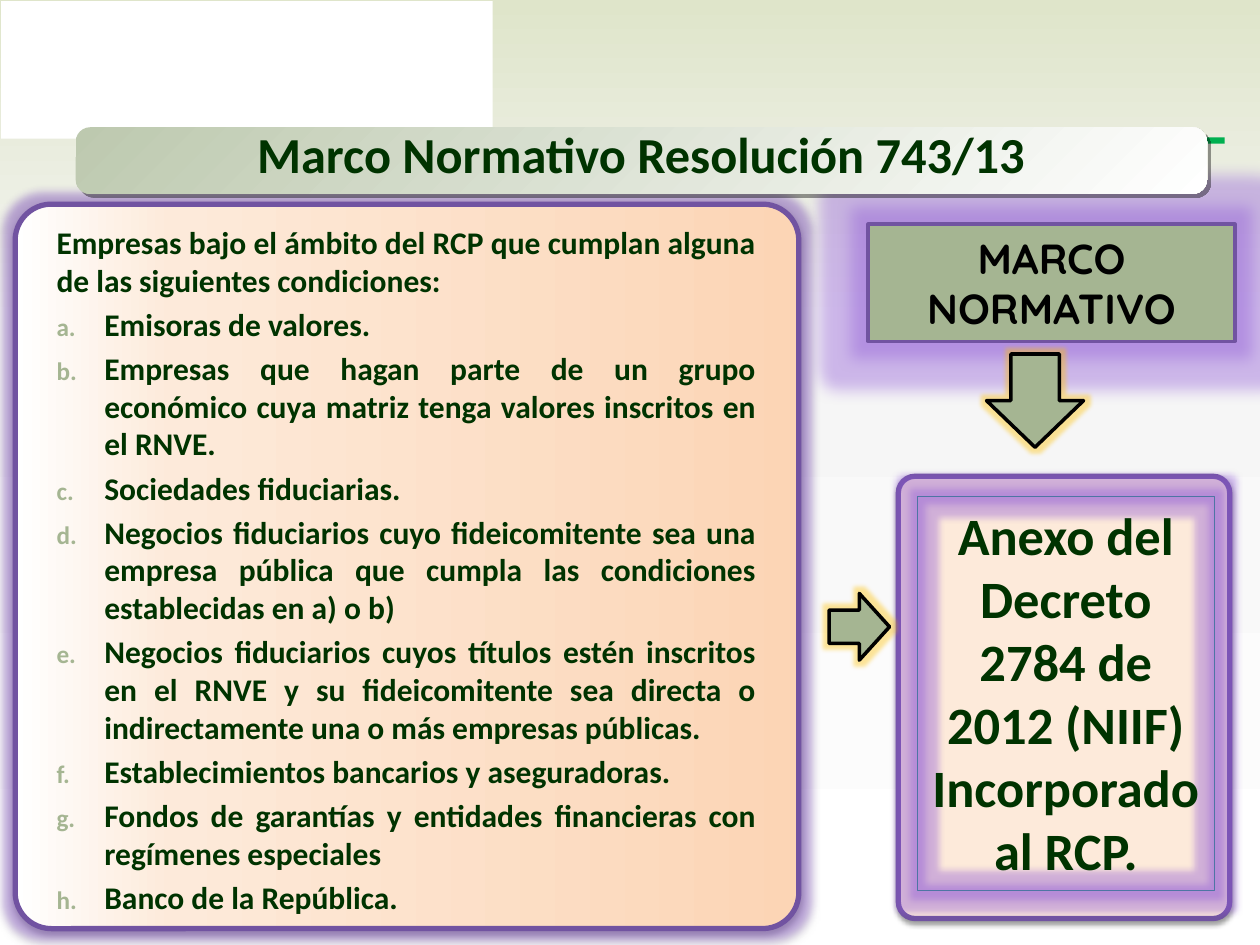
from lxml import etree
from pptx import Presentation
from pptx.dml.color import RGBColor
from pptx.enum.shapes import MSO_SHAPE
from pptx.enum.text import MSO_ANCHOR, PP_ALIGN
from pptx.oxml.ns import qn
from pptx.util import Inches, Pt

RECT, ROUND = MSO_SHAPE.RECTANGLE, MSO_SHAPE.ROUNDED_RECTANGLE
DOWN, RIGHT = MSO_SHAPE.DOWN_ARROW, MSO_SHAPE.RIGHT_ARROW
CENTER, JUSTIFY = PP_ALIGN.CENTER, PP_ALIGN.JUSTIFY
TOP, MIDDLE = MSO_ANCHOR.TOP, MSO_ANCHOR.MIDDLE

WHITE = RGBColor(0xFF, 0xFF, 0xFF)
BLACK = RGBColor(0, 0, 0)
GREEN = RGBColor(0x00, 0xB0, 0x50)
DARK_GREEN = RGBColor(0x00, 0x33, 0x00)
SAGE = RGBColor(0xA5, 0xB5, 0x92)
PALE_SAGE = RGBColor(0xBD, 0xC9, 0xAF)
PURPLE = RGBColor(0x71, 0x53, 0xA1)
LILAC = RGBColor(0x8E, 0x58, 0xD6)
AMBER = RGBColor(0xFF, 0xC0, 0x00)
BLUE = RGBColor(0x4E, 0x75, 0xA3)
PEACH = RGBColor(0xFC, 0xD5, 0xB5)
PALE_PEACH = RGBColor(0xFD, 0xEA, 0xDA)
BG_GREEN = RGBColor(0xDF, 0xE5, 0xCA)
BG_GREY = RGBColor(0xF6, 0xF6, 0xF6)

TITLE = "Marco Normativo Resolución 743/13"
INTRO = "Empresas bajo el ámbito del RCP que cumplan alguna de las siguientes condiciones:"
CONDITIONS = [
    "Emisoras de valores.",
    "Empresas que hagan parte de un grupo económico cuya matriz tenga valores inscritos en el RNVE.",
    "Sociedades fiduciarias.",
    "Negocios fiduciarios cuyo fideicomitente sea una empresa pública que cumpla las condiciones "
    "establecidas en a) o b)",
    "Negocios fiduciarios cuyos títulos estén inscritos en el RNVE y su fideicomitente sea directa o "
    "indirectamente una o más empresas públicas.",
    "Establecimientos bancarios y aseguradoras.",
    "Fondos de garantías y entidades financieras con regímenes especiales",
    "Banco de la República.",
]
ANNEX = "Anexo del Decreto 2784 de 2012 (NIIF) Incorporado al RCP."


def add_color(parent, color, alpha=None):
    clr = etree.SubElement(parent, qn("a:srgbClr"), val=str(color))
    if alpha:
        etree.SubElement(clr, qn("a:alpha"), val=str(alpha * 1000))


def set_gradient(fill, element, stops, angle):
    fill.gradient()
    grad = next(element.iter(qn("a:gradFill")))
    for child in list(grad):
        grad.remove(child)
    gs_list = etree.SubElement(grad, qn("a:gsLst"))
    for pos, color in stops:
        add_color(etree.SubElement(gs_list, qn("a:gs"), pos=str(pos * 1000)), color)
    etree.SubElement(grad, qn("a:lin"), ang=str(angle * 60000), scaled="0")


def add_shape(slide, kind, box, fill=None, line=None, width=1, radius=None):
    sp = slide.shapes.add_shape(kind, *map(Inches, box))
    sp.shadow.inherit = False
    if radius is not None:
        sp.adjustments[0] = radius
    if fill is None:
        sp.fill.background()
    else:
        sp.fill.solid()
        sp.fill.fore_color.rgb = fill
    if line is None:
        sp.line.fill.background()
    else:
        sp.line.color.rgb = line
        sp.line.width = Pt(width)
    return sp


def add_glow(sp, color, radius):
    effects = sp._element.spPr.find(qn("a:effectLst"))
    add_color(etree.SubElement(effects, qn("a:glow"), rad=str(Pt(radius))), color, 40)


def add_shadow(sp, alpha, blur, dist, angle):
    effects = sp._element.spPr.find(qn("a:effectLst"))
    shadow = etree.SubElement(effects, qn("a:outerShdw"), blurRad=str(Pt(blur)), dist=str(Pt(dist)),
                              dir=str(angle * 60000), algn="ctr", rotWithShape="0")
    add_color(shadow, BLACK, alpha)


def add_letter(p):
    pPr = p._p.get_or_add_pPr()
    pPr.set("marL", str(Inches(0.38)))
    pPr.set("indent", str(-Inches(0.38)))
    add_color(etree.SubElement(pPr, qn("a:buClr")), SAGE)
    etree.SubElement(pPr, qn("a:buSzPct"), val="80000")
    etree.SubElement(pPr, qn("a:buFont"), typeface="+mj-lt")
    etree.SubElement(pPr, qn("a:buAutoNum"), type="alphaLcPeriod")


def write(sp, texts, size, align, anchor=TOP, font="Calibri", color=DARK_GREEN, **layout):
    tf = sp.text_frame
    tf.word_wrap = True
    tf.vertical_anchor = anchor
    for i, text in enumerate(texts):
        p = tf.paragraphs[0] if i == 0 else tf.add_paragraph()
        p.alignment = align
        for name, value in layout.items():
            if i or name != "space_before":
                setattr(p, name, value)
        r = p.add_run()
        r.text = text
        for name, value in {"name": font, "size": Pt(size), "bold": True}.items():
            setattr(r.font, name, value)
        r.font.color.rgb = color
    return tf


def add_backdrop(slide, box):
    x, y, w, h = box
    set_gradient(slide.background.fill, slide._element,
                 [(0, BG_GREEN), (34, BG_GREY), (100, WHITE)], 90)
    add_shape(slide, RECT, (x + 0.01, y + 0.01, 3.9, h - 0.05), WHITE)
    add_shape(slide, RECT, (x + 4.25, y + h - 0.05, w - 4.25, 0.05), GREEN)


def add_conditions(slide, box):
    x, y, w, h = box
    panel = add_shape(slide, ROUND, box, PEACH, PURPLE, 3, 0.05)
    set_gradient(panel.fill, panel._element, [(0, WHITE), (20, PALE_PEACH), (100, PEACH)], 0)
    add_glow(panel, LILAC, 10)
    add_shadow(panel, 38, 3.1, 1.6, 90)
    text = slide.shapes.add_textbox(*map(Inches, (x + 0.23, y + 0.1, w - 0.47, h - 0.01)))
    tf = write(text, [INTRO, *CONDITIONS], 18, JUSTIFY, space_before=Pt(3.6))
    for p in tf.paragraphs[1:]:
        add_letter(p)


def add_annex(slide, box):
    x, y, w, h = box
    panel = add_shape(slide, ROUND, box, PALE_PEACH, PURPLE, 3, 0.05)
    add_shadow(panel, 38, 3.1, 1.6, 90)
    frame = add_shape(slide, RECT, (x + 0.15, y + 0.16, w - 0.27, h - 0.38), line=BLUE, width=0.75)
    add_glow(frame, LILAC, 8)
    write(frame, [ANNEX], 30, CENTER)


def add_heading(slide, box):
    sp = add_shape(slide, RECT, box, SAGE, PURPLE, 2)
    add_glow(sp, LILAC, 18)
    write(sp, ["MARCO", "NORMATIVO"], 24, CENTER, MIDDLE, "Quicksand", BLACK)


def add_arrow(slide, kind, box):
    add_glow(add_shape(slide, kind, box, SAGE, BLACK, 2), AMBER, 5)


def add_title(slide, box):
    sp = add_shape(slide, ROUND, box, WHITE, radius=0.22)
    set_gradient(sp.fill, sp._element, [(0, PALE_SAGE), (100, WHITE)], 45)
    add_shadow(sp, 40, 0, 3, 45)
    write(sp, [TITLE], 28.8, CENTER, MIDDLE, line_spacing=0.7, space_after=Pt(10))


def main():
    prs = Presentation()
    prs.slide_width, prs.slide_height = Inches(10), Inches(7.5)
    slide = prs.slides.add_slide(prs.slide_layouts[6])
    add_backdrop(slide, (0, 0, 9.72, 1.14))
    add_conditions(slide, (0.12, 1.62, 6.22, 5.75))
    add_annex(slide, (7.13, 3.78, 2.63, 3.51))
    add_heading(slide, (6.89, 1.78, 2.91, 0.93))
    add_arrow(slide, DOWN, (7.83, 2.81, 0.77, 0.74))
    add_arrow(slide, RIGHT, (6.58, 4.71, 0.48, 0.53))
    add_title(slide, (0.6, 1.01, 8.98, 0.53))
    prs.save("out.pptx")


if __name__ == "__main__":
    main()
